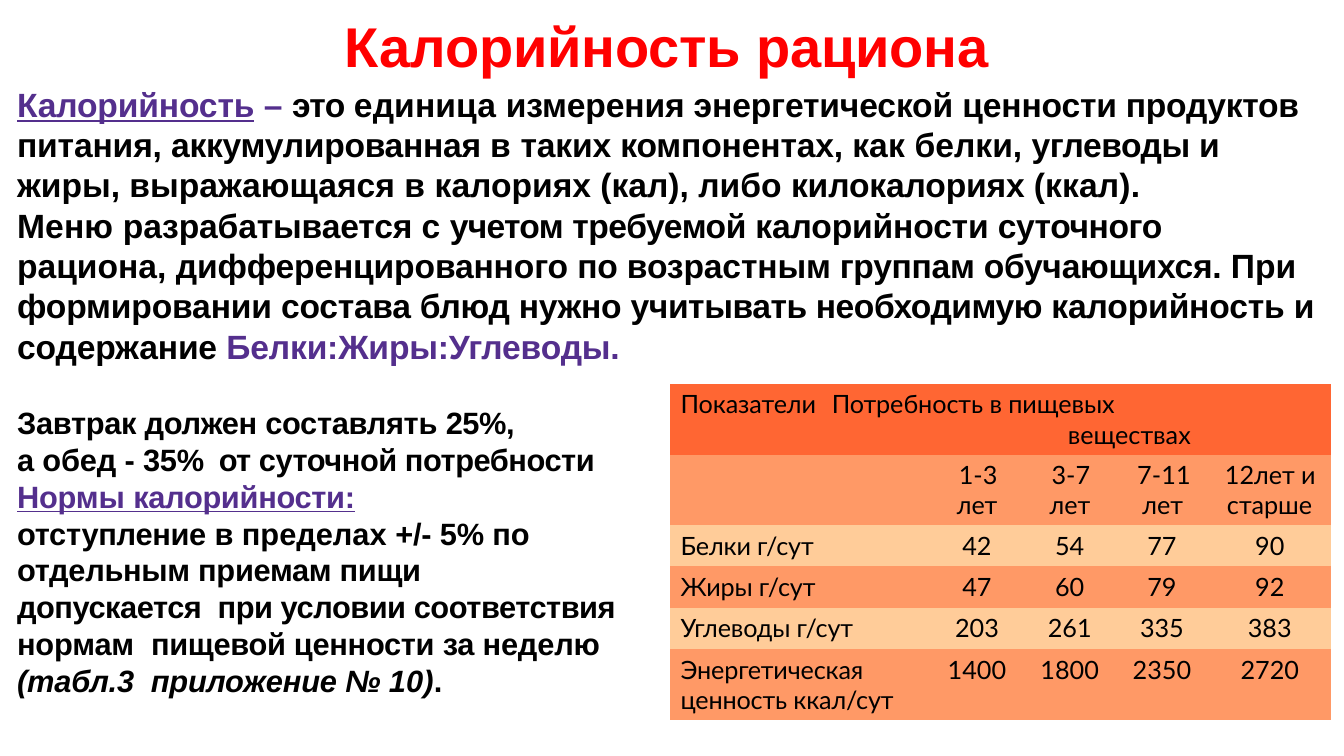
from lxml import etree
from pptx import Presentation
from pptx.dml import color
from pptx.enum import text
from pptx.oxml import ns
from pptx.util import Inches, Pt

RED, PURPLE, BLACK = "FF0000", "542F8D", "000000"
HEADER, DARK, LIGHT = "FF6633", "FF9966", "FFCC99"
NO_GRID = "{2D5ABB26-0587-4C30-8999-92F81FD0307C}"


def paint(target, value):
    target.rgb = color.RGBColor.from_string(value)


def add_span(para, words, size, font, value=BLACK, spacing=0, bold=False, underline=False, italic=False):
    span = para.add_run()
    span.text = words
    span.font.size, span.font.name = Pt(size), font
    span.font.bold, span.font.underline, span.font.italic = bold, underline, italic
    paint(span.font.color, value)
    span._r.get_or_add_rPr().set("spc", str(round(spacing * 100)))


def shape_para(para, indent=0, before=0, line=None, tab=None, right=0, align=text.PP_ALIGN.LEFT):
    para.alignment = align
    para.space_before, para.space_after = Pt(before), Pt(0)
    para.line_spacing = Pt(line) if line else 1.0
    properties = para._p.get_or_add_pPr()
    for name, length in (("marL", indent), ("indent", 0), ("marR", right)):
        properties.set(name, str(Inches(length)))
    etree.SubElement(properties, ns.qn("a:buNone"))
    if tab:
        stops = etree.SubElement(properties, ns.qn("a:tabLst"))
        etree.SubElement(stops, ns.qn("a:tab"), pos=str(Inches(tab)), algn="l")


def place(holder, box, top_inset):
    holder.left, holder.top, holder.width, holder.height = (Inches(side) for side in box)
    frame = holder.text_frame
    frame.word_wrap = True
    frame.auto_size = text.MSO_AUTO_SIZE.NONE
    frame.vertical_anchor = text.MSO_ANCHOR.TOP
    frame.margin_left = frame.margin_right = frame.margin_bottom = 0
    frame.margin_top = Inches(top_inset)
    return frame


def fill_paragraphs(frame, count):
    return [frame.paragraphs[0]] + [frame.add_paragraph() for _ in range(count - 1)]


def add_title(page, box):
    para = place(page.shapes.title, box, 0.01).paragraphs[0]
    shape_para(para, 0.01, 0.9, 48)
    add_span(para, "Калорийность рациона", 40, "Arial", RED, -0.1, bold=True)


def add_body(page, box):
    mark = {"value": PURPLE, "underline": True}
    definition = [
        ("Калорийность", -0.1, mark), (" ", -0.2, {"value": PURPLE}), ("– ", 0.1, {"value": PURPLE}),
        ("это ", -0.5), ("единица ", 0.1), ("измерения энергетической ценности ", -0.1),
        ("продуктов  ", -0.2), ("питания, ", -0.1), ("аккумулированная ", -0.2), ("в ", 0.1),
        ("таких компонентах, ", -0.1), ("как ", 0.1), ("белки, ", 0), ("углеводы ", -0.3), ("и", 0.1)]
    units = [("жиры, выражающаяся ", 0), ("в ", 0.1), ("калориях (кал), либо ", 0),
             ("килокалориях ", -0.1), ("(ккал).", 0.1)]
    menu = [("Меню ", 0.1), ("разрабатывается ", -0.1), ("с ", 0.1), ("учетом ", -0.5),
            ("требуемой ", -0.3), ("калорийности ", -0.1), ("суточного", -0.3)]
    ration = [("рациона, ", 0), ("дифференцированного по возрастным ", -0.1),
              ("группам обучающихся. ", -0.2), ("При  ", 0.1), ("формировании ", -0.1),
              ("состава блюд нужно ", -0.2), ("учитывать необходимую ", -0.3),
              ("калорийность ", -0.1), ("и  ", 0.1), ("содержание ", -0.1),
              ("Белки:Жиры:Углеводы.", -0.1, {"value": PURPLE})]
    breakfast = [("Завтрак должен составлять ", -0.2), ("25%,", -0.3)]
    lunch = [("а обед - 35%\t", -0.1), ("от ", -0.5), ("суточной потребности", -0.3)]
    norms = [("Нормы ", -0.1, mark), ("калорийности:", -0.2, mark)]
    deviation = [("отступление ", -0.2), ("в ", -0.1), ("пределах ", 0), ("+/- 5% по", -0.1)]
    meals = [("отдельным приемам пищи\t", -0.2), ("допускается  при ", -0.3),
             ("условии соответствия ", -0.3), ("нормам  ", -0.1), ("пищевой ценности ", -0.2),
             ("за ", -0.3), ("неделю ", -0.1), ("(табл.3  приложение № ", -0.1, {"italic": True}),
             ("10)", 0.1, {"italic": True}), (".", 0.1)]
    blocks = [
        (definition, 24, {"before": 1.1}), (units, 24, {}), (menu, 24, {}), (ration, 24, {}),
        (breakfast, 22, {"before": 26.8}), (lunch, 22, {"tab": 2.06}), (norms, 22, {}),
        (deviation, 22, {}), (meals, 22, {"tab": 4.25, "right": 6.98})]
    frame = place(page.placeholders[1], box, 0.02)
    for para, (spans, size, layout) in zip(fill_paragraphs(frame, len(blocks)), blocks):
        shape_para(para, 0.01, line=size * 1.2, **layout)
        for words, spacing, *style in spans:
            add_span(para, words, size, "Arial", spacing=spacing, bold=True, **(style[0] if style else {}))


def fill_cell(cell, shade, lines, align=text.PP_ALIGN.LEFT):
    cell.fill.solid()
    paint(cell.fill.fore_color, shade)
    cell.margin_left = cell.margin_right = cell.margin_bottom = 0
    cell.margin_top = Inches(0.05)
    paragraphs = fill_paragraphs(cell.text_frame, max(1, len(lines)))
    for number, (para, (indent, words, spacing)) in enumerate(zip(paragraphs, lines)):
        tab = 3.15 if "\t" in words else None
        shape_para(para, indent, 0 if number else 3.5, tab=tab, align=align)
        add_span(para, words, 18, "Lato", spacing=spacing)


def add_needs_table(page, box):
    widths = [2.47, 1.03, 0.92, 0.91, 1.22]
    heights = [0.7, 0.7, 0.41, 0.41, 0.41, 0.7]
    table = page.shapes.add_table(6, 5, *(Inches(side) for side in box)).table
    table.first_row = table.horz_banding = False
    table._tbl.tblPr.find(ns.qn("a:tableStyleId")).text = NO_GRID
    for column, width in zip(table.columns, widths):
        column.width = Inches(width)
    for row, height in zip(table.rows, heights):
        row.height = Inches(height)
    table.cell(0, 0).merge(table.cell(0, 4))
    fill_cell(table.cell(0, 0), HEADER,
              [(0.1, "Показатели\tПотребность в пищевых", -0.05), (3.94, "веществах", 0)])
    ages = [[], [(0.39, "1-3", 0), (0.37, "лет", 0)], [(0.28, "3-7", 0), (0.26, "лет", 0.1)],
            [(0.21, "7-11", 0.1), (0.26, "лет", 0.1)], [(0.17, "12лет и", 0), (0.19, "старше", 0)]]
    for column, lines in enumerate(ages):
        fill_cell(table.cell(1, column), DARK, lines)
    needs = [
        (["Белки г/сут"], [42, 54, 77, 90]),
        (["Жиры г/сут"], [47, 60, 79, 92]),
        (["Углеводы г/сут"], [203, 261, 335, 383]),
        (["Энергетическая", "ценность ккал/сут"], [1400, 1800, 2350, 2720])]
    for row, (label, values) in enumerate(needs, 2):
        shade = DARK if row % 2 else LIGHT
        fill_cell(table.cell(row, 0), shade, [(0.1, words, -0.1) for words in label])
        for column, (value, indent) in enumerate(zip(values, [0.11, 0, 0, 0.01]), 1):
            fill_cell(table.cell(row, column), shade, [(indent, str(value), 0)], text.PP_ALIGN.CENTER)


def main():
    deck = Presentation()
    deck.slide_width, deck.slide_height = Inches(13.33), Inches(7.5)
    page = deck.slides.add_slide(deck.slide_layouts[1])
    add_title(page, (3.41, 0.1, 6.44, 0.69))
    add_body(page, (0.16, 0.81, 13.07, 6.12))
    add_needs_table(page, (6.65, 3.81, 6.55, 3.33))
    deck.save("out.pptx")


if __name__ == "__main__":
    main()
